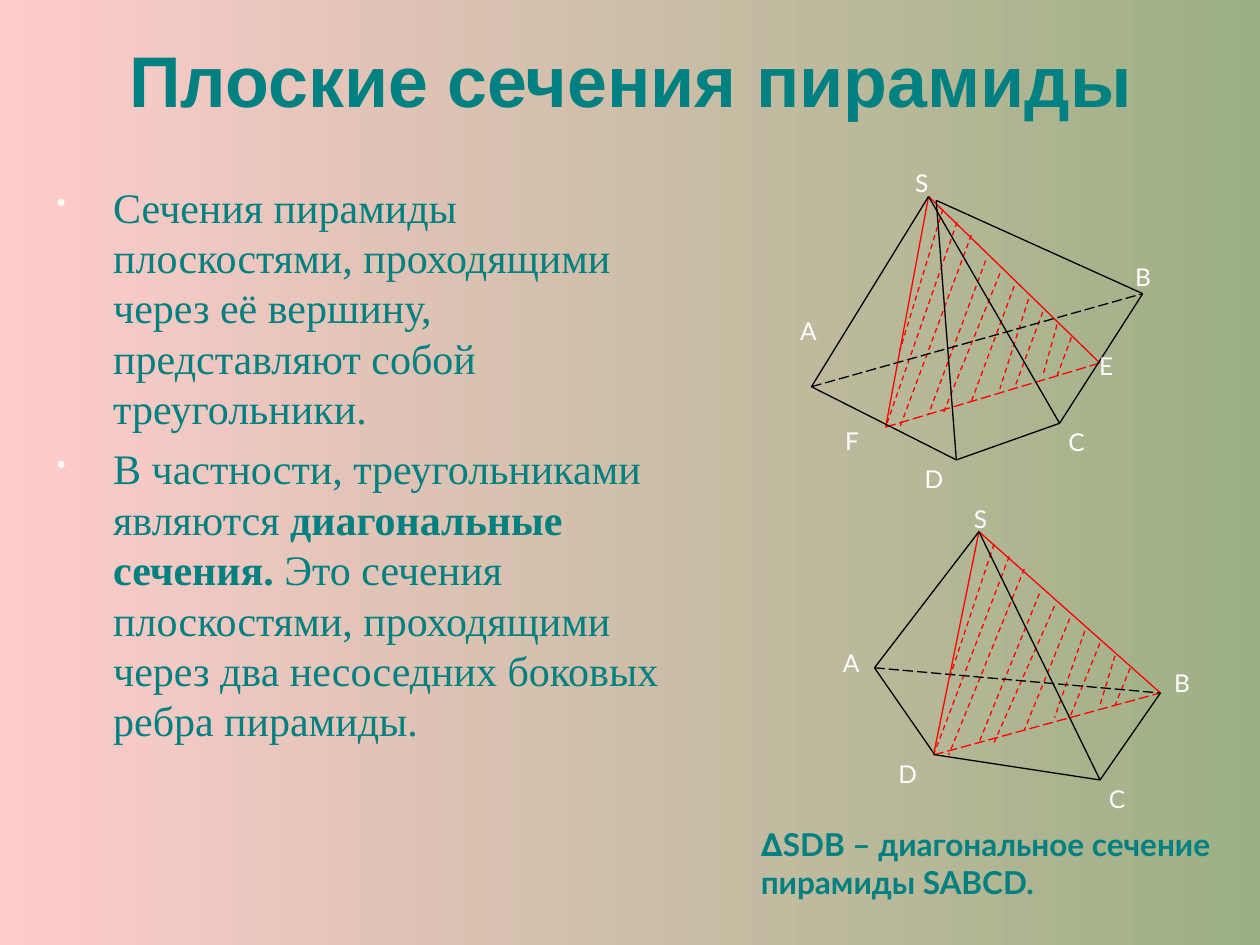
import pptx
import pptx.util
import pptx.dml.color
import pptx.enum.dml
import pptx.enum.shapes
import pptx.enum.text
import pptx.oxml
from lxml import etree

Pt = pptx.util.Pt
DASH = pptx.enum.dml.MSO_LINE
ANCHOR = pptx.enum.text.MSO_ANCHOR

COLORS = {"pink": "FFCCCC", "green": "9CB084", "teal": "008080",
          "red": "FF0000", "black": "000000", "white": "FFFFFF", "bullet": "F9F9F9"}

TITLE = "Плоские сечения пирамиды"
BODY = [
    [("Сечения пирамиды плоскостями, проходящими через её вершину, "
      "представляют собой треугольники.", False)],
    [("В частности, треугольниками являются ", False),
     ("диагональные сечения.", True),
     (" Это сечения плоскостями, проходящими через два несоседних "
      "боковых ребра пирамиды.", False)],
]
CAPTION = "∆SDB – диагональное сечение пирамиды SABCD."

APEX, NEAR, FAR = (0, 0), (-3, 18), (12, 13)
SECTION = [(APEX, NEAR, None), (APEX, FAR, None), (NEAR, FAR, DASH.LONG_DASH)]
HATCHES = [((1, 1), (-2, 12)), ((2, 2), NEAR), ((3, 3), (-2, 18)),
           ((4, 5), (0, 17)), ((5, 6), (1, 17)), ((6, 7), (3, 16)),
           ((7, 8), (5, 15)), ((8, 9), (6, 15)), ((9, 10), (8, 14)),
           ((10, 11), (9, 14))]

EDGES = ["SA", "SC", "AD", "BC", "DC"]
HIDDEN_EDGE = "AB"
SMALL, WIDE = (5, 2.2), (7.2, 3.6)
PYRAMIDS = [
    {"unit": (8.16, 7.32),
     "points": {"S": (530.6, 112.3), "T": (535, 114.5), "A": (463.7, 221),
                "B": (653, 167.8), "C": (605.5, 241.9), "D": (546.5, 262.8)},
     "edges": EDGES + ["TB", "DT"],
     "labels": [("A", 452.2, 178.6, 32, 29, SMALL), ("C", 605.5, 241.9, 25, 22, SMALL),
                ("D", 523.4, 262.8, 25, 22, SMALL), ("S", 518, 93.6, 41, 22, SMALL),
                ("B", 641.5, 146.2, 35, 28, WIDE), ("E", 621, 197.3, 32, 32, WIDE),
                ("F", 475.9, 239.8, 35, 32, WIDE)]},
    {"unit": (8.64, 7.09),
     "points": {"S": (559.4, 303.8), "A": (499.7, 381.6), "B": (663.1, 396),
                "C": (628.6, 445.7), "D": (534.2, 431.3)},
     "edges": EDGES,
     "labels": [("A", 476.6, 367.9, 35, 28, SMALL), ("C", 628.6, 445.7, 26, 21, SMALL),
                ("D", 508.3, 431.3, 26, 21, SMALL), ("S", 551.5, 285.8, 26, 21, SMALL),
                ("B", 663.8, 378, 37, 27, WIDE)]},
]


def rgb(name):
    return pptx.dml.color.RGBColor.from_string(COLORS[name])


def style(font, name, size, color, bold=False):
    font.name, font.size, font.bold = name, Pt(size), bold
    font.color.rgb = rgb(color)


def add_line(shapes, start, end, color, dash=None):
    c = shapes.add_connector(pptx.enum.shapes.MSO_CONNECTOR.STRAIGHT,
                             *[Pt(v) for v in (*start, *end)])
    c.line.color.rgb = rgb(color)
    c.line.width = Pt(0.75)
    if dash is not None:
        c.line.dash_style = dash
    etree.SubElement(c._element.spPr, pptx.oxml.ns.qn("a:effectLst"))


def add_box(shapes, left, top, width, height, inset=WIDE):
    tf = shapes.add_textbox(Pt(left), Pt(top), Pt(width), Pt(height)).text_frame
    tf.word_wrap = True
    tf.margin_left = tf.margin_right = Pt(inset[0])
    tf.margin_top = tf.margin_bottom = Pt(inset[1])
    return tf


def add_bullet(p):
    pPr = p._p.get_or_add_pPr()
    pPr.set("marL", str(Pt(43.2)))
    pPr.set("indent", str(Pt(-32.4)))
    color = etree.SubElement(pPr, pptx.oxml.ns.qn("a:buClr"))
    etree.SubElement(color, pptx.oxml.ns.qn("a:srgbClr"), val=COLORS["bullet"])
    etree.SubElement(pPr, pptx.oxml.ns.qn("a:buSzPct"), val="65000")
    etree.SubElement(pPr, pptx.oxml.ns.qn("a:buChar"), char="•")


def add_pyramid(s, pyramid):
    shapes = s.shapes.add_group_shape().shapes
    points, unit = pyramid["points"], pyramid["unit"]

    def grid(cell):
        return [o + n * u for o, n, u in zip(points["S"], cell, unit)]

    for start, end, dash in SECTION:
        add_line(shapes, grid(start), grid(end), "red", dash)
    for start, end in HATCHES:
        add_line(shapes, grid(start), grid(end), "red", DASH.DASH)
    for a, b in pyramid["edges"]:
        add_line(shapes, points[a], points[b], "black")
    a, b = HIDDEN_EDGE
    add_line(shapes, points[a], points[b], "black", DASH.LONG_DASH)
    for text, *place in pyramid["labels"]:
        p = add_box(shapes, *place).paragraphs[0]
        p.text = text
        style(p.runs[0].font, "Lato", 14, "white")


def main():
    prs = pptx.Presentation()
    prs.slide_width, prs.slide_height = Pt(720), Pt(540)
    s = prs.slides.add_slide(prs.slide_layouts[5])

    fill = s.background.fill
    fill.gradient()
    fill.gradient_angle = 0
    for stop, position, color in zip(fill.gradient_stops, (0, 1), ("pink", "green")):
        stop.position = position
        stop.color.rgb = rgb(color)

    title = s.shapes.title
    title.left, title.top, title.width, title.height = Pt(36.7), Pt(0), Pt(648), Pt(90)
    title.text_frame.text = TITLE
    title.text_frame.vertical_anchor = ANCHOR.MIDDLE
    p = title.text_frame.paragraphs[0]
    p.alignment = pptx.enum.text.PP_ALIGN.CENTER
    style(p.runs[0].font, "Arial", 41, "teal", True)

    tf = add_box(s.shapes, 14.4, 100, 381, 371)
    for i, parts in enumerate(BODY):
        p = tf.add_paragraph() if i else tf.paragraphs[0]
        add_bullet(p)
        p.line_spacing = Pt(28.8)
        if i:
            p.space_before = Pt(5.5)
        for text, bold in parts:
            r = p.add_run()
            r.text = text
            style(r.font, "Times New Roman", 24, "teal", bold)

    for pyramid in PYRAMIDS:
        add_pyramid(s, pyramid)

    p = add_box(s.shapes, 427.7, 468, 292.3, 72).paragraphs[0]
    p.text = CAPTION
    style(p.runs[0].font, "Lato", 18, "teal", True)

    prs.save("out.pptx")


if __name__ == "__main__":
    main()
